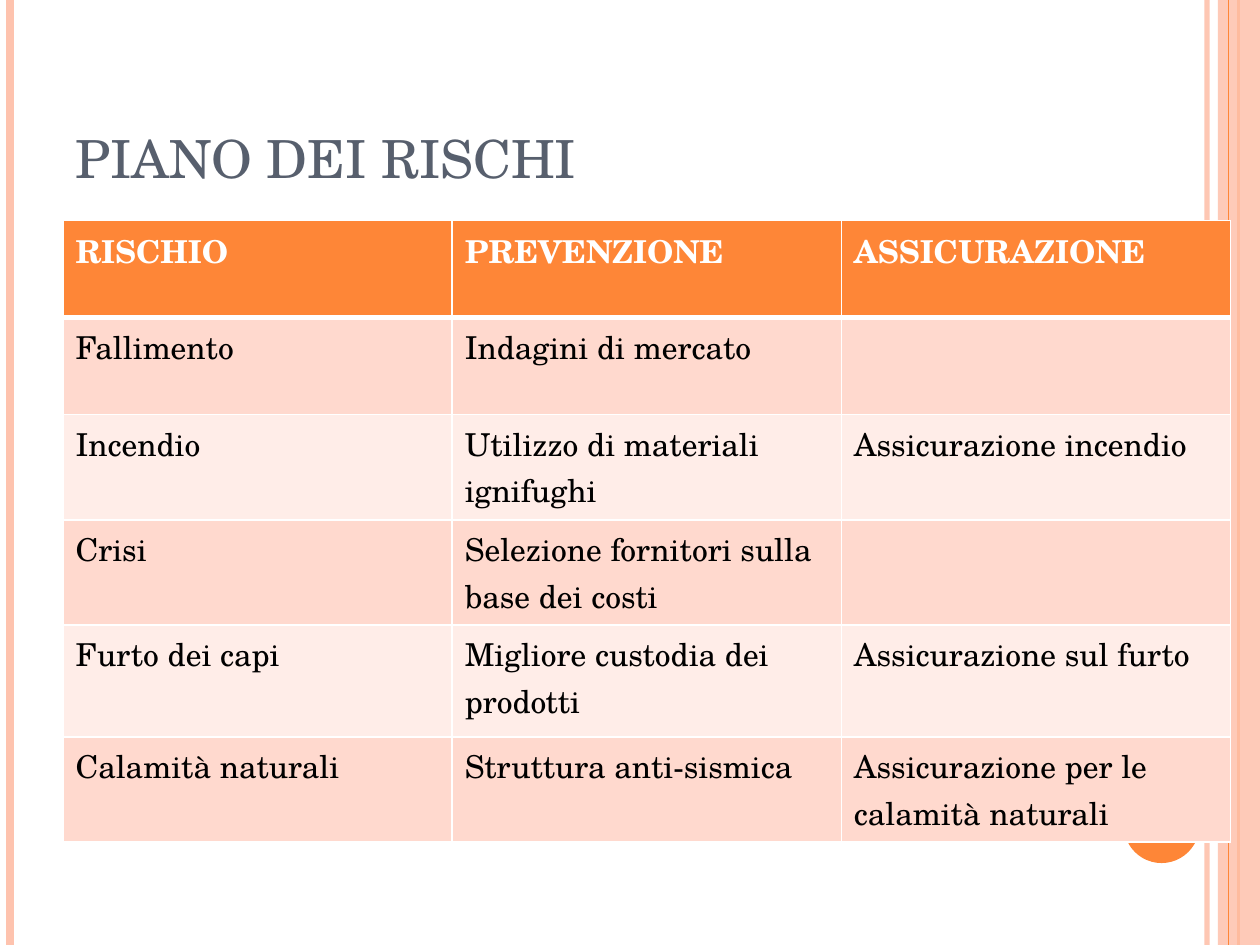
from lxml.etree import SubElement
from pptx import Presentation
from pptx.dml.color import RGBColor
from pptx.enum.shapes import MSO_CONNECTOR, MSO_SHAPE
from pptx.enum.text import MSO_ANCHOR, PP_ALIGN
from pptx.oxml.ns import qn
from pptx.util import Pt

FONT = "TeX Gyre Schola"
ORANGE, PEACH, WHITE = "FE8637", "FEC3AE", "FFFFFF"
BANDS = ["FFEDE8", "FFD9CE"]
WIDTH, HEIGHT = 720, 540

TITLE = "PIANO DEI RISCHI"
ROWS = [
    ("RISCHIO", "PREVENZIONE", "ASSICURAZIONE"),
    ("Fallimento", "Indagini di mercato", ""),
    ("Incendio", "Utilizzo di materiali ignifughi", "Assicurazione incendio"),
    ("Crisi", "Selezione fornitori sulla base dei costi", ""),
    ("Furto dei capi", "Migliore custodia dei prodotti", "Assicurazione sul furto"),
    ("Calamità naturali", "Struttura anti-sismica",
     "Assicurazione per le calamità naturali"),
]
ROW_HEIGHTS = [55.5, 55.5, 55.5, 55.5, 64, 55.5]
TABLE_LEFT, TABLE_TOP, COLUMN_WIDTH = 36, 126, 222.4

STRIPES = [(689.8, PEACH, 3, 93), (5.8, PEACH, 4.5, 100), (707.8, ORANGE, 1.5, 100)]
INNER_STRIPE = (702, ORANGE, 0.75, 100)
SIDE_BAND = (MSO_SHAPE.RECTANGLE, (696, 0, 24, HEIGHT), PEACH, 87)
DISC = (MSO_SHAPE.OVAL, (642.2, 450, 43.2, 43.2), ORANGE, 100)


def rgb(color):
    return RGBColor.from_string(color)


def set_alpha(parent, percent):
    if percent < 100:
        clr = next(parent.iter(qn("a:srgbClr")))
        SubElement(clr, qn("a:alpha"), val=str(percent * 1000))


def add_stripe(s, x, color, width, alpha):
    line = s.shapes.add_connector(MSO_CONNECTOR.STRAIGHT, Pt(x), 0, Pt(x), Pt(HEIGHT))
    line.line.color.rgb = rgb(color)
    line.line.width = Pt(width)
    props = line._element.spPr
    set_alpha(props, alpha)
    SubElement(props, qn("a:effectLst"))


def add_shape(s, kind, box, color, alpha):
    sp = s.shapes.add_shape(kind, *map(Pt, box))
    sp.shadow.inherit = False
    sp.fill.solid()
    sp.fill.fore_color.rgb = rgb(color)
    sp.line.fill.background()
    set_alpha(sp._element.spPr, alpha)


def write(tf, text, color, **formats):
    p = tf.paragraphs[0]
    p.alignment = PP_ALIGN.LEFT
    font = p.font
    if text:
        r = p.add_run()
        r.text = text
        font = r.font
    font.color.rgb = rgb(color)
    for name, value in {"name": FONT, **formats}.items():
        setattr(font, name, value)


def set_borders(cell, widths):
    props = cell._tc.get_or_add_tcPr()
    for i, (side, width) in enumerate(widths.items()):
        ln = SubElement(props, qn(f"a:ln{side}"), w=str(Pt(width)))
        fill = SubElement(ln, qn("a:solidFill"))
        SubElement(fill, qn("a:srgbClr"), val=WHITE)
        props.insert(i, ln)


def add_risk_table(s):
    columns = len(ROWS[0])
    table = s.shapes.add_table(
        len(ROWS), columns, Pt(TABLE_LEFT), Pt(TABLE_TOP),
        Pt(COLUMN_WIDTH * columns), Pt(sum(ROW_HEIGHTS))).table
    for column in table.columns:
        column.width = Pt(COLUMN_WIDTH)
    for i, (texts, height) in enumerate(zip(ROWS, ROW_HEIGHTS)):
        header = i == 0
        table.rows[i].height = Pt(height)
        for j, text in enumerate(texts):
            cell = table.cell(i, j)
            cell.fill.solid()
            cell.fill.fore_color.rgb = rgb(ORANGE if header else BANDS[i % 2])
            set_borders(cell, {"L": 1, "R": 1, "T": 3 if i == 1 else 1,
                               "B": 3 if header else 1})
            write(cell.text_frame, text, WHITE if header else "000000",
                  size=Pt(18), bold=header)


def main():
    prs = Presentation()
    prs.slide_width, prs.slide_height = Pt(WIDTH), Pt(HEIGHT)
    s = prs.slides.add_slide(prs.slide_layouts[5])
    for stripe in STRIPES:
        add_stripe(s, *stripe)
    add_shape(s, *SIDE_BAND)
    add_stripe(s, *INNER_STRIPE)
    add_shape(s, *DISC)

    title = s.shapes.title
    title.left, title.top, title.width, title.height = map(Pt, (36, 21.6, 588, 90))
    title.text_frame.vertical_anchor = MSO_ANCHOR.BOTTOM
    write(title.text_frame, TITLE, "575F6D", size=Pt(30))

    add_risk_table(s)
    prs.save("out.pptx")


if __name__ == "__main__":
    main()
